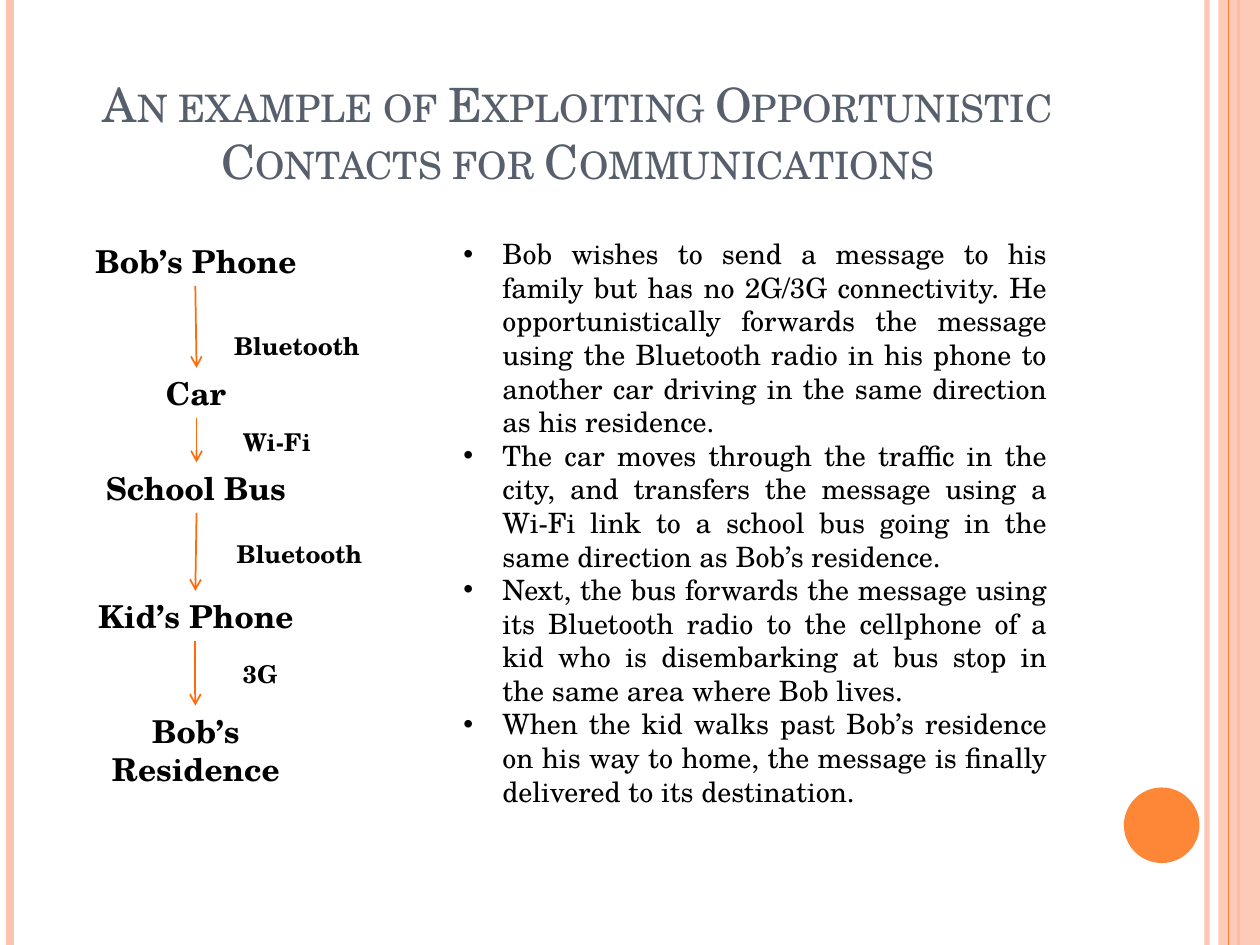
from lxml import etree
from pptx import Presentation
from pptx.dml.color import RGBColor
from pptx.enum.shapes import MSO_CONNECTOR, MSO_SHAPE
from pptx.enum.text import MSO_ANCHOR, MSO_AUTO_SIZE, PP_ALIGN
from pptx.oxml.ns import qn
from pptx.util import Inches, Pt

STRAIGHT = MSO_CONNECTOR.STRAIGHT
RECT, OVAL = MSO_SHAPE.RECTANGLE, MSO_SHAPE.OVAL
BOTTOM = MSO_ANCHOR.BOTTOM
NO_FIT = MSO_AUTO_SIZE.NONE
LEFT, CENTER, JUSTIFY = PP_ALIGN.LEFT, PP_ALIGN.CENTER, PP_ALIGN.JUSTIFY

FONT = "TeX Gyre Schola"
ORANGE, PINK, ARROW = "FE8637", "FEC3AE", "FF6B0A"
BLACK, SLATE = "000000", "575F6D"

STRIPES = [(9.58, PINK, 3, 93), (0.08, PINK, 4.5, 100),
           (9.83, ORANGE, 1.5, 100), (9.75, ORANGE, 0.75, 100)]
STOPS = [("Bob’s Phone", 1.87), ("Car", 2.92), ("School Bus", 3.67),
         ("Kid’s Phone", 4.69), ("Bob’s Residence", 5.6)]
LINKS = [("Bluetooth", 1.76, 2.58, 1.55, 1.56), ("Wi-Fi", 1.83, 3.34, 1.56, 1.56),
         ("Bluetooth", 1.78, 4.23, 1.56, 1.55), ("3G", 1.83, 5.18, 1.55, 1.55)]
STEPS = [
    "Bob wishes to send a message to his family but has no 2G/3G connectivity. "
    "He opportunistically forwards the message using the Bluetooth radio in his "
    "phone to another car driving in the same direction as his residence.",
    "The car moves through the traffic in the city, and transfers the message "
    "using a Wi-Fi link to a school bus going in the same direction as Bob’s residence.",
    "Next, the bus forwards the message using its Bluetooth radio to the cellphone "
    "of a kid who is disembarking at bus stop in the same area where Bob lives.",
    "When the kid walks past Bob’s residence on his way to home, the message is "
    "finally delivered to its destination.",
]


def rgb(color):
    return RGBColor.from_string(color)


def set_alpha(sp, percent):
    for clr in sp._element.spPr.iter(qn("a:srgbClr")):
        etree.SubElement(clr, qn("a:alpha")).set("val", str(percent * 1000))


def style(p, size, color=BLACK, bold=False, align=LEFT):
    p.alignment = align
    p.font.name, p.font.size, p.font.bold = FONT, Pt(size), bold
    p.font.color.rgb = rgb(color)


def add_line(s, x1, y1, x2, y2, color, width):
    sp = s.shapes.add_connector(STRAIGHT, Inches(x1), Inches(y1), Inches(x2), Inches(y2))
    sp.line.color.rgb = rgb(color)
    sp.line.width = Pt(width)
    etree.SubElement(sp._element.spPr, qn("a:effectLst"))
    return sp


def add_arrow(s, x1, y1, x2, y2):
    sp = add_line(s, x1, y1, x2, y2, ARROW, 1)
    etree.SubElement(sp.line._get_or_add_ln(), qn("a:tailEnd")).set("type", "arrow")


def add_block(s, kind, x, y, w, h, color):
    sp = s.shapes.add_shape(kind, Inches(x), Inches(y), Inches(w), Inches(h))
    sp.shadow.inherit = False
    sp.fill.solid()
    sp.fill.fore_color.rgb = rgb(color)
    sp.line.fill.background()
    return sp


def add_text(s, x, y, w, h, text):
    tf = s.shapes.add_textbox(Inches(x), Inches(y), Inches(w), Inches(h)).text_frame
    tf.word_wrap = True
    tf.text = text
    return tf


def add_bullet(p):
    pPr = p._p.get_or_add_pPr()
    pPr.set("marL", str(Inches(0.31)))
    pPr.set("indent", str(Inches(-0.31)))
    font = etree.Element(qn("a:buFont"), typeface="Arial")
    char = etree.Element(qn("a:buChar"), char="•")
    pPr.insert(0, font)
    pPr.insert(1, char)


def add_frame(s):
    for x, color, width, alpha in STRIPES:
        sp = add_line(s, x, 0, x, 7.5, color, width)
        if alpha < 100:
            set_alpha(sp, alpha)
        if x == 9.83:
            set_alpha(add_block(s, RECT, 9.67, 0, 0.33, 7.5, PINK), 87)
    add_block(s, OVAL, 8.92, 6.25, 0.6, 0.6, ORANGE)


def add_title(s, text):
    sp = s.shapes.title
    sp.left, sp.top, sp.width, sp.height = map(Inches, (0.5, 0.3, 8.17, 1.25))
    tf = sp.text_frame
    tf.text = text
    tf.auto_size = NO_FIT
    tf.vertical_anchor = BOTTOM
    p = tf.paragraphs[0]
    style(p, 27, SLATE, align=CENTER)
    p.font._element.set("cap", "small")


def add_route(s):
    for name, y in STOPS:
        tf = add_text(s, 0.47, y, 2.17, 0.4, name)
        style(tf.paragraphs[0], 18, bold=True, align=CENTER)
    for (_, y1), (_, y2), (name, x, y, x1, x2) in zip(STOPS, STOPS[1:], LINKS):
        add_arrow(s, x1, y1 + 0.4, x2, y2)
        tf = add_text(s, x, y, 1.82, 0.34, name)
        style(tf.paragraphs[0], 14, bold=True)


def add_steps(s):
    tf = add_text(s, 3.58, 1.83, 4.83, 4.68, "\n".join(STEPS))
    for p in tf.paragraphs:
        style(p, 16, align=JUSTIFY)
        add_bullet(p)


def main():
    prs = Presentation()
    prs.slide_width, prs.slide_height = Inches(10), Inches(7.5)
    s = prs.slides.add_slide(prs.slide_layouts[5])
    add_frame(s)
    add_title(s, "An example of Exploiting Opportunistic Contacts for Communications")
    add_route(s)
    add_steps(s)
    prs.save("out.pptx")


if __name__ == "__main__":
    main()
